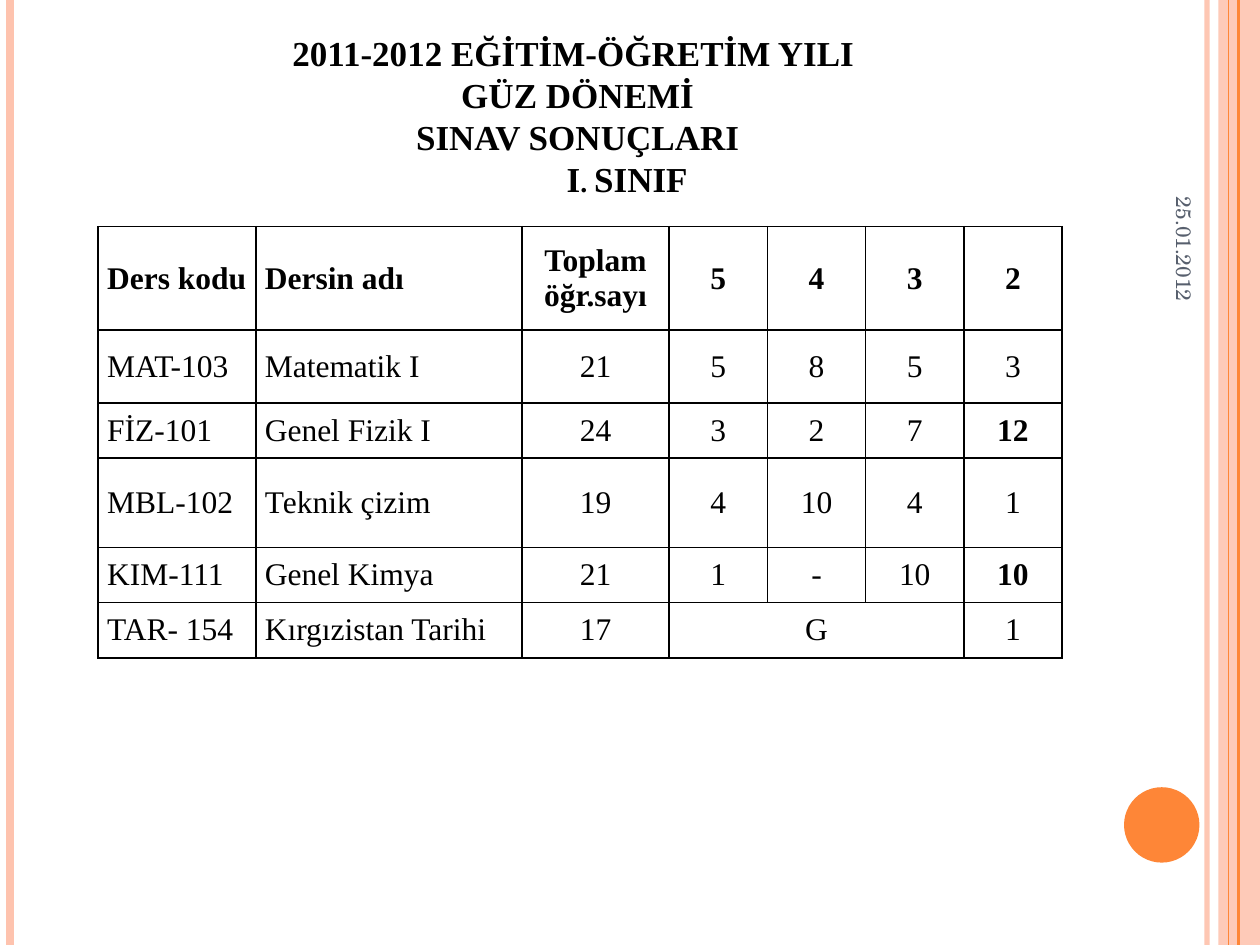
import pptx
import pptx.dml.color
import pptx.enum.shapes
import pptx.enum.text
import pptx.oxml.ns
import pptx.util
from dataclasses import dataclass
from lxml import etree

Cm = pptx.util.Cm
Pt = pptx.util.Pt
qn = pptx.oxml.ns.qn
ALIGN = pptx.enum.text.PP_ALIGN
ANCHOR = pptx.enum.text.MSO_ANCHOR
SHAPES = pptx.enum.shapes.MSO_SHAPE


@dataclass(frozen=True)
class Theme:
    peach: str = "FEC3AE"
    orange: str = "FE8637"
    black: str = "000000"
    slate: str = "575F6D"
    font: str = "Times New Roman"
    date_font: str = "TeX Gyre Schola"
    title_size: float = 20
    title_spacing: float = 24
    table_size: float = 18
    date_size: float = 12


theme = Theme()


def set_opacity(element, percent):
    color = next(element.iter(qn("a:srgbClr")))
    etree.SubElement(color, qn("a:alpha")).set("val", str(percent * 1000))


def format_font(font, **values):
    font.color.rgb = pptx.dml.color.RGBColor.from_string(values.pop("color"))
    values["size"] = Pt(values["size"])
    for name, value in values.items():
        setattr(font, name, value)


presentation = pptx.Presentation()
presentation.slide_width = Cm(25.4)
presentation.slide_height = Cm(19.05)
slide = presentation.slides.add_slide(presentation.slide_layouts[5])

# Side band and circle, then the vertical rules around them
decorations = [
    (SHAPES.RECTANGLE, 24.56, 0, 0.84, 19.05, theme.peach, 87),
    (SHAPES.OVAL, 22.66, 15.87, 1.52, 1.52, theme.orange, 100),
]
for kind, left, top, width, height, color, opacity in decorations:
    shape = slide.shapes.add_shape(kind, Cm(left), Cm(top), Cm(width), Cm(height))
    shape.shadow.inherit = False
    shape.fill.solid()
    shape.fill.fore_color.rgb = pptx.dml.color.RGBColor.from_string(color)
    shape.line.fill.background()
    if opacity < 100:
        set_opacity(shape.fill._xPr, opacity)

rules = [
    (24.33, theme.peach, 3, 93),
    (0.21, theme.peach, 4.5, 100),
    (24.97, theme.orange, 1.5, 100),
    (24.77, theme.orange, 0.75, 100),
]
for x, color, weight, opacity in rules:
    rule = slide.shapes.add_connector(
        pptx.enum.shapes.MSO_CONNECTOR.STRAIGHT, Cm(x), 0, Cm(x), presentation.slide_height)
    rule.line.color.rgb = pptx.dml.color.RGBColor.from_string(color)
    rule.line.width = Pt(weight)
    if opacity < 100:
        set_opacity(rule.line._ln, opacity)
    etree.SubElement(rule._element.spPr, qn("a:effectLst"))

# Title
title = slide.shapes.title
title_box = {"left": Cm(1.27), "top": Cm(0.76), "width": Cm(20.75), "height": Cm(3.4)}
for name, value in title_box.items():
    setattr(title, name, value)
title_frame = title.text_frame
frame_format = {"word_wrap": True, "auto_size": pptx.enum.text.MSO_AUTO_SIZE.NONE,
                "vertical_anchor": ANCHOR.BOTTOM, "margin_top": 0, "margin_bottom": Cm(0.13)}
for name, value in frame_format.items():
    setattr(title_frame, name, value)
title_frame.text = "2011-2012 EĞİTİM-ÖĞRETİM YILI \nGÜZ DÖNEMİ\nSINAV SONUÇLARI\nI. SINIF"
for paragraph in title_frame.paragraphs:
    paragraph.alignment = ALIGN.CENTER
    paragraph.line_spacing = Pt(theme.title_spacing)
    format_font(paragraph.runs[0].font, name=theme.font, size=theme.title_size,
                color=theme.black, bold=True)
class_line = title_frame.paragraphs[-1]
class_line._p.get_or_add_pPr().set("marL", str(Cm(2)))
class_line.runs[0].font._element.set("cap", "small")

# Results table
rows = [
    ["Ders kodu", "Dersin adı", "Toplam öğr.sayı", "5", "4", "3", "2"],
    ["MAT-103", "Маtematik I", "21", "5", "8", "5", "3"],
    ["FİZ-101", "Genel Fizik I", "24", "3", "2", "7", "12"],
    ["MBL-102", "Теknik çizim", "19", "4", "10", "4", "1"],
    ["KIM-111", "Genel Kimya", "21", "1", "-", "10", "10"],
    ["TAR- 154", "Kırgızistan Tarihi", "17", "G", "", "", "1"],
]
column_widths = [3.18, 5.36, 2.97] + [1.98] * 4
row_heights = [2.08, 1.47, 1.11, 1.81, 1.11, 1.11]
bold_cells = {(2, 6), (4, 6)}
table = slide.shapes.add_table(
    len(rows), len(column_widths), Cm(1.98), Cm(4.57),
    Cm(sum(column_widths)), Cm(sum(row_heights))).table
for column, width in zip(table.columns, column_widths):
    column.width = Cm(width)
for row, height in zip(table.rows, row_heights):
    row.height = Cm(height)
table.cell(5, 3).merge(table.cell(5, 5))

cell_format = {"vertical_anchor": ANCHOR.MIDDLE, "margin_left": Cm(0.18),
               "margin_right": Cm(0.18), "margin_top": 0, "margin_bottom": 0}
for row_index, texts in enumerate(rows):
    for column_index, text in enumerate(texts):
        cell = table.cell(row_index, column_index)
        for name, value in cell_format.items():
            setattr(cell, name, value)
        properties = cell._tc.get_or_add_tcPr()
        for side in ("a:lnL", "a:lnR", "a:lnT", "a:lnB"):
            border = etree.SubElement(properties, qn(side), w=str(Pt(1)))
            fill = etree.SubElement(border, qn("a:solidFill"))
            etree.SubElement(fill, qn("a:srgbClr"), val=theme.black)
        cell.fill.background()
        if text:
            cell.text = text
            paragraph = cell.text_frame.paragraphs[0]
            paragraph.alignment = ALIGN.LEFT if column_index < 2 else ALIGN.CENTER
            format_font(paragraph.runs[0].font, name=theme.font, size=theme.table_size,
                        color=theme.black,
                        bold=row_index == 0 or (row_index, column_index) in bold_cells)

# Date along the right edge
date_box = slide.shapes.add_textbox(Cm(21.08), Cm(3), Cm(5.59), Cm(1.07))
date_box.rotation = 90
date_box.text_frame.word_wrap = True
date_box.text_frame.vertical_anchor = ANCHOR.MIDDLE
date_box.text_frame.text = "25.01.2012"
paragraph = date_box.text_frame.paragraphs[0]
paragraph.alignment = ALIGN.RIGHT
format_font(paragraph.runs[0].font, name=theme.date_font, size=theme.date_size,
            color=theme.slate)

presentation.save("out.pptx")
